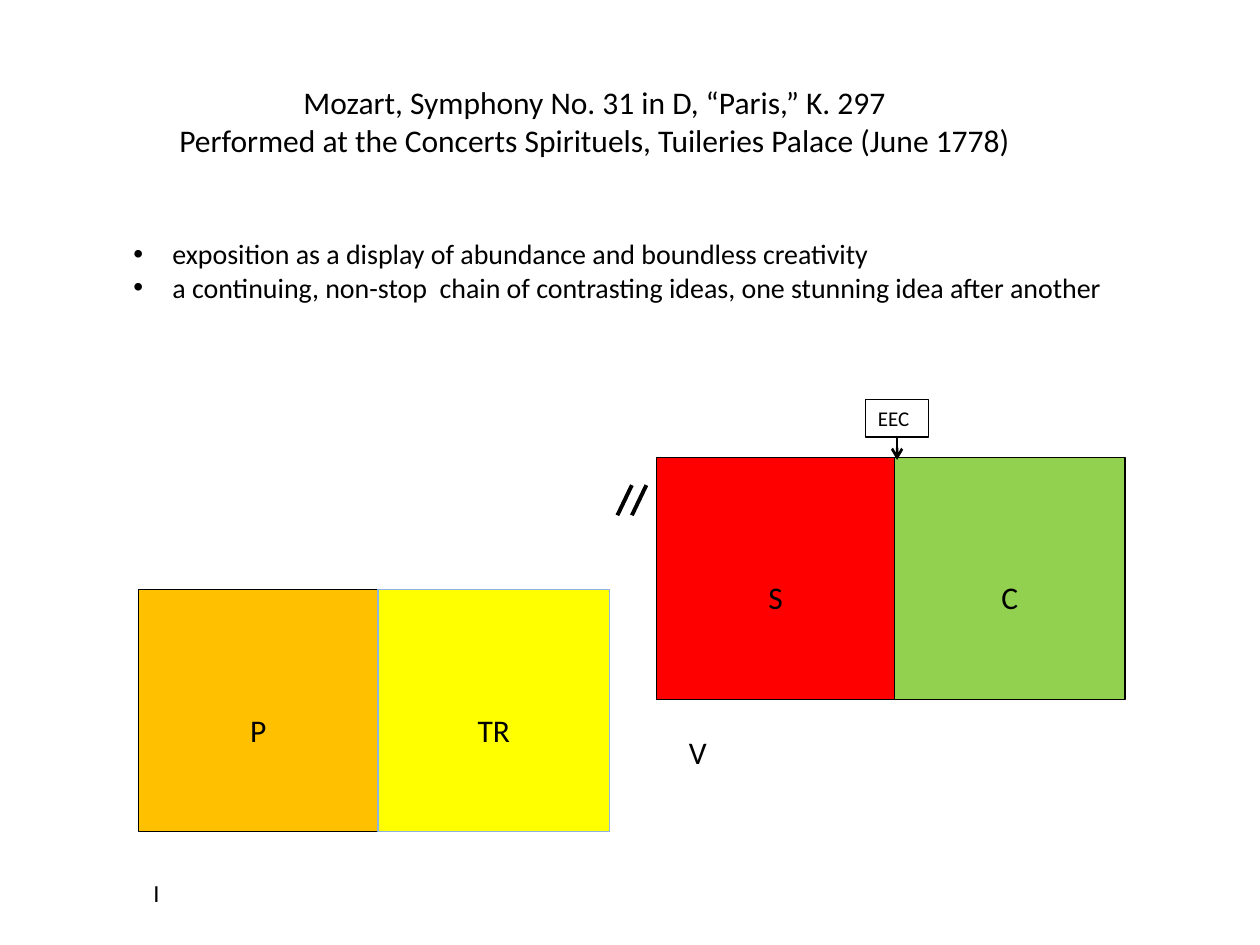
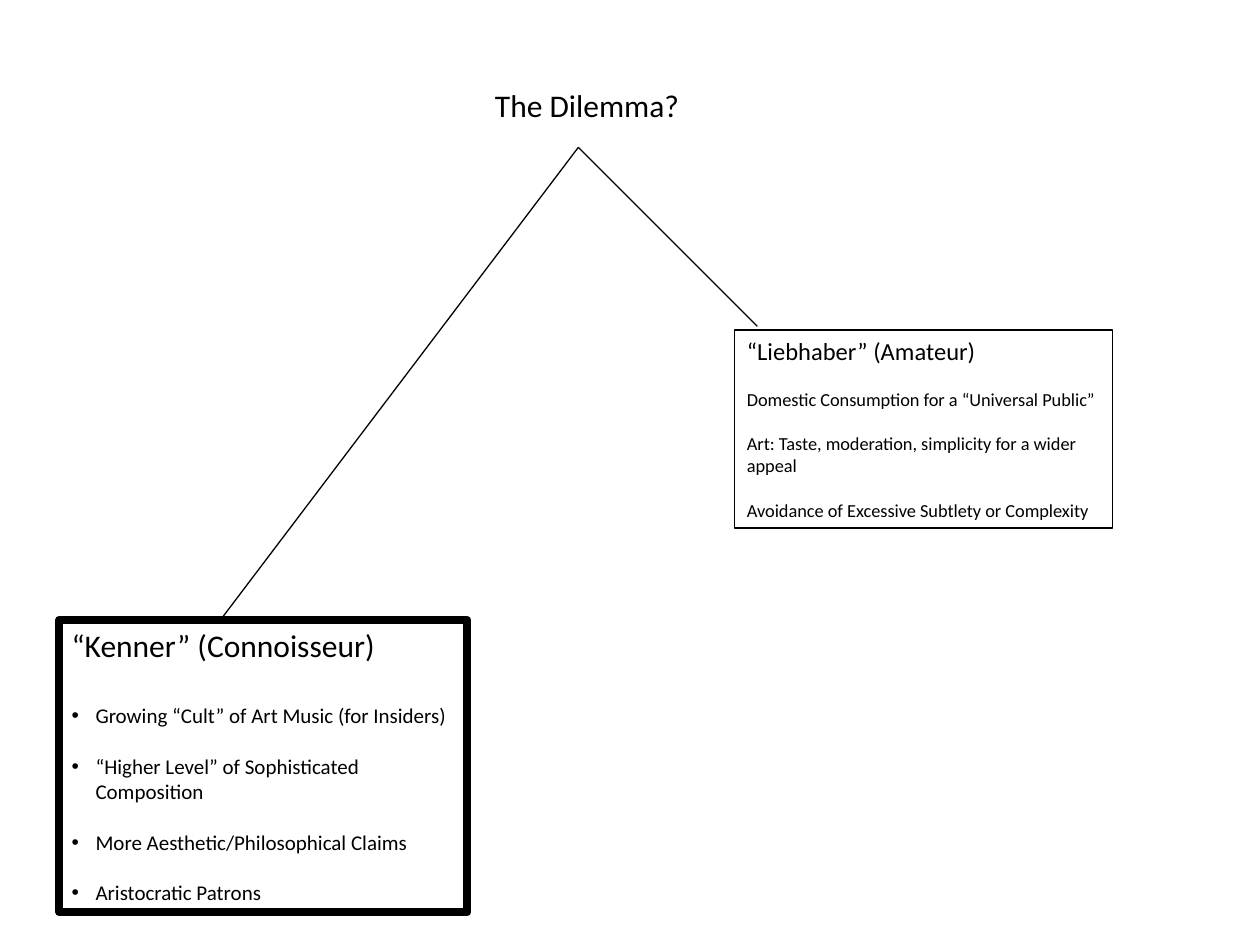
from lxml.etree import SubElement
from pptx import Presentation
from pptx.dml.color import RGBColor
from pptx.enum.shapes import MSO_CONNECTOR as Conn, MSO_SHAPE as Shape
from pptx.enum.text import MSO_ANCHOR as Anchor, PP_ALIGN as Align
from pptx.oxml.ns import qn
from pptx.util import Inches, Pt

FONT = "Calibri"
TITLE_SIZE = 18
LINE = 1.22  # line height of the font, as a share of its size
COLORS = {
    "ink": "000000",
    "primary": "FFC000",
    "transition": "FFFF00",
    "transition_line": "8EB4E3",
    "secondary": "FF0000",
    "closing": "92D050",
}


def color(name):
    return RGBColor.from_string(COLORS[name])


def write(tf, text, size, align=Align.LEFT, before=0, indent=0):
    """Add one paragraph; an indent (inches) gives it a bullet."""
    p = tf.paragraphs[0]
    if p.runs:
        p = tf.add_paragraph()
    p.alignment = align
    p.space_before = Pt(before)
    if indent:
        pPr = p._p.get_or_add_pPr()
        pPr.set("marL", str(Inches(indent)))
        pPr.set("indent", str(-Inches(indent)))
        SubElement(pPr, qn("a:buFont")).set("typeface", "Arial")
        SubElement(pPr, qn("a:buChar")).set("char", "•")
    r = p.add_run()
    r.text = text
    r.font.name = FONT
    r.font.size = Pt(size)
    r.font.color.rgb = color("ink")


def text_box(s, box):
    tf = s.shapes.add_textbox(*map(Inches, box)).text_frame
    tf.word_wrap = True
    return tf


def rect(s, box, fill=None, line="ink", weight=0.75):
    sp = s.shapes.add_shape(Shape.RECTANGLE, *map(Inches, box))
    sp.shadow.inherit = False
    if fill:
        sp.fill.solid()
        sp.fill.fore_color.rgb = color(fill)
    else:
        sp.fill.background()
    sp.line.color.rgb = color(line)
    sp.line.width = Pt(weight)
    sp.text_frame.word_wrap = True
    sp.text_frame.vertical_anchor = Anchor.TOP
    return sp


def line(s, start, end, weight=0.75, arrow=False):
    c = s.shapes.add_connector(Conn.STRAIGHT, *map(Inches, (*start, *end)))
    c.line.color.rgb = color("ink")
    c.line.width = Pt(weight)
    if arrow:
        SubElement(c.line._get_or_add_ln(), qn("a:tailEnd")).set("type", "arrow")
    SubElement(c._element.spPr, qn("a:effectLst"))
    return c


def title(s, box, lines, align=Align.LEFT):
    tf = text_box(s, box)
    for text in lines:
        write(tf, text, TITLE_SIZE, align)


def zone_pair(s, box, zones, key, key_size, key_offset):
    """Adjoining blocks (label, width, fill, line) with a key label below."""
    x, y, w, h = box
    left = x
    for label, width, fill, edge in zones:
        tf = rect(s, (left, y, width, h), fill, edge).text_frame
        tf.margin_top = Inches(h / 2)
        write(tf, label, TITLE_SIZE, Align.CENTER)
        left += width
    dx, dy = key_offset
    write(text_box(s, (x + dx, y + h + dy, 0.4, 0.4)), key, key_size)


def medial_caesura(s, box):
    x, y, w, h = box
    slant = w / 2
    for left in (x, x + w - slant):
        line(s, (left + slant, y), (left, y + h), 2.25)


def eec_marker(s, box, drop):
    x, y, w, h = box
    sp = rect(s, box)
    write(sp.text_frame, "EEC", 12)
    mid, bottom = x + w / 2, y + h
    c = line(s, (mid, bottom), (mid, bottom + drop), 1.5, arrow=True)
    c.begin_connect(sp, 2)


def audience(s, box, heading, head_size, items, size, gap, weight=0.75, indent=0):
    """Framed heading and items; gap is the size of the space below the heading."""
    tf = rect(s, box, weight=weight).text_frame
    write(tf, heading, head_size)
    for i, item in enumerate(items):
        write(tf, item, size, before=LINE * (size if i else gap), indent=indent)


def symphony_slide(prs):
    s = prs.slides.add_slide(prs.slide_layouts[6])
    # Exposition plan: tonic half, then the raised dominant half
    zone_pair(s, (1.1, 4.68, 3.74, 1.92),
              [("P", 1.9, "primary", "ink"),
               ("TR", 1.84, "transition", "transition_line")],
              "I", 14, (0.02, 0.32))
    zone_pair(s, (5.21, 3.63, 3.72, 1.92),
              [("S", 1.89, "secondary", "ink"), ("C", 1.83, "closing", "ink")],
              "V", 18, (0.16, 0.22))
    medial_caesura(s, (4.9, 3.85, 0.23, 0.24))
    # Heading and remarks
    title(s, (1.26, 0.61, 6.92, 0.71),
          ["Mozart, Symphony No. 31 in D, “Paris,” K. 297",
           "Performed at the Concerts Spirituels, Tuileries Palace (June 1778)"],
          Align.CENTER)
    remarks = text_box(s, (0.96, 1.83, 8.21, 0.64))
    for text in (
        "exposition as a display of abundance and boundless creativity",
        "a continuing, non-stop  chain of contrasting ideas, one stunning idea after another",
    ):
        write(remarks, text, 16, indent=0.31)
    eec_marker(s, (6.87, 3.17, 0.5, 0.3), 0.18)


def dilemma_slide(prs):
    s = prs.slides.add_slide(prs.slide_layouts[6])
    # Branches from the question to the two audiences
    for end in ((1.75, 4.92), (6.01, 2.59)):
        line(s, (4.59, 1.17), end)
    title(s, (3.83, 0.63, 1.79, 0.4), ["The Dilemma?"])
    audience(s, (0.47, 4.92, 3.24, 2.32), "“Kenner” (Connoisseur)", 18,
             ["Growing “Cult” of Art Music (for Insiders)",
              "“Higher Level” of Sophisticated Composition",
              "More Aesthetic/Philosophical Claims",
              "Aristocratic Patrons"],
             12, gap=18, weight=4.5, indent=0.19)
    audience(s, (5.83, 2.62, 3, 1.57), "“Liebhaber” (Amateur)", 14,
             ["Domestic Consumption for a “Universal Public”",
              "Art: Taste, moderation, simplicity for a wider appeal",
              "Avoidance of Excessive Subtlety or Complexity"],
             10.5, gap=10.5)


def main():
    prs = Presentation()
    prs.slide_width, prs.slide_height = Inches(10), Inches(7.5)
    symphony_slide(prs)
    dilemma_slide(prs)
    prs.save("out.pptx")


if __name__ == "__main__":
    main()
